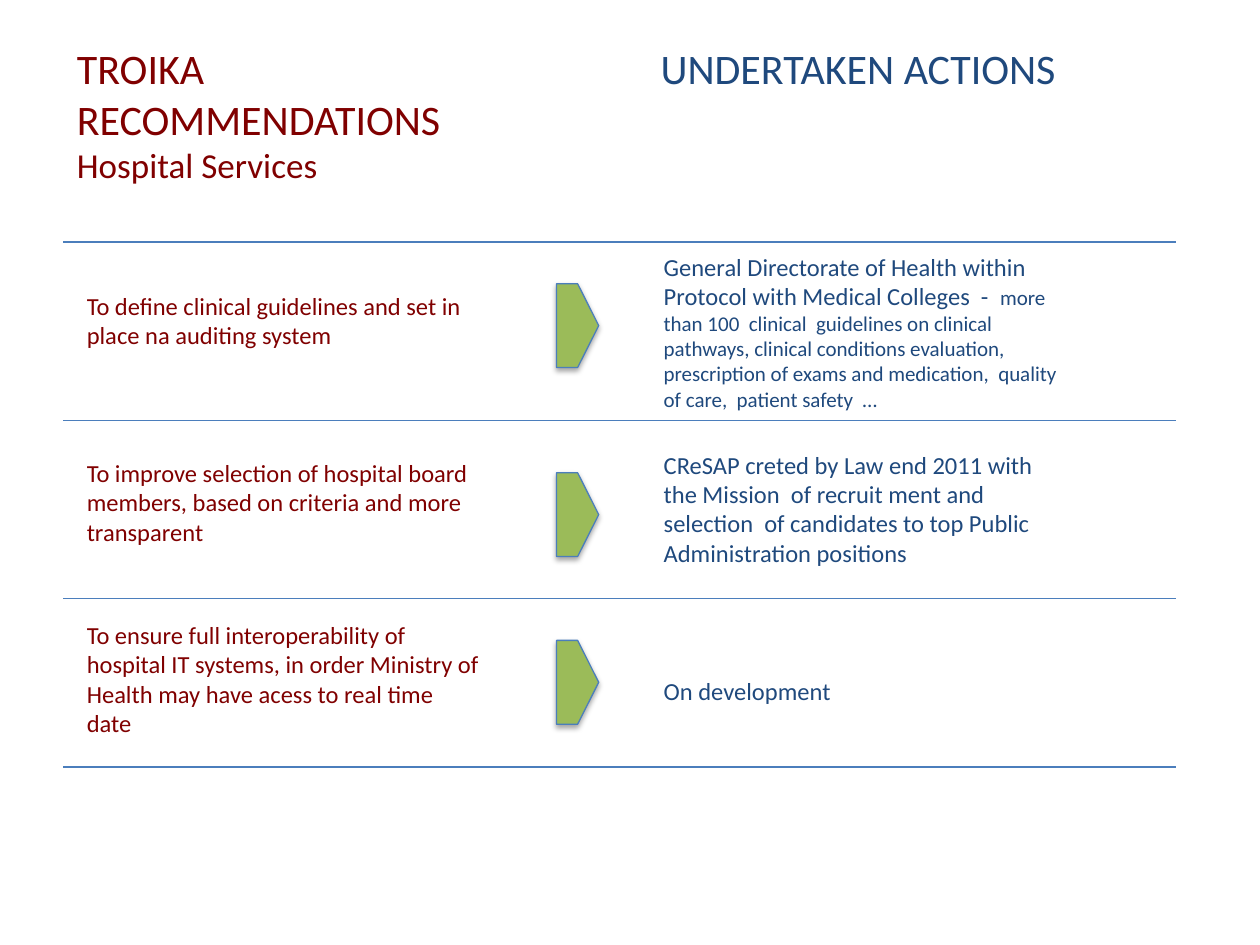
from lxml import etree
from pptx import Presentation
from pptx.dml.color import RGBColor
from pptx.enum.shapes import MSO_CONNECTOR, MSO_SHAPE
from pptx.enum.text import PP_ALIGN
from pptx.oxml import parse_xml
from pptx.oxml.ns import qn
from pptx.util import Cm, Pt

MAROON, NAVY, GREEN, BLUE = "800000", "1F497D", "9BBB59", "4B7EBC"
DRAWING_NS = "http://schemas.openxmlformats.org/drawingml/2006/main"

presentation = Presentation()
presentation.slide_width, presentation.slide_height = Cm(25.4), Cm(19.05)
slide = presentation.slides.add_slide(presentation.slide_layouts[6])


def add_frame(left, top, width, height):
    frame = slide.shapes.add_textbox(Cm(left), Cm(top), Cm(width), Cm(height)).text_frame
    frame.word_wrap = True
    return frame


def write(paragraph, text, size=14, color=NAVY, align=PP_ALIGN.LEFT):
    paragraph.alignment = align
    run = paragraph.add_run()
    run.text = text
    run.font.name = "Calibri"
    run.font.size = Pt(size)
    run.font.color.rgb = RGBColor.from_string(color)


# Column headings
recommendations = add_frame(1.3, 0.74, 10.24, 3.2)
write(recommendations.paragraphs[0], "TROIKA RECOMMENDATIONS", size=24, color=MAROON)
write(recommendations.add_paragraph(), "Hospital Services", size=20, color=MAROON)
actions = add_frame(12.2, 0.74, 10.2, 1.4)
write(actions.paragraphs[0], "UNDERTAKEN ACTIONS", size=24, align=PP_ALIGN.CENTER)

# Rules between the rows
for rule_top in (4.88, 8.47, 12.07, 15.46):
    rule = slide.shapes.add_connector(
        MSO_CONNECTOR.STRAIGHT, Cm(1.27), Cm(rule_top), Cm(23.7), Cm(rule_top))
    rule.line.color.rgb = RGBColor.from_string(BLUE)
    rule.line.width = Pt(0.75)
    etree.SubElement(rule._element.spPr, qn("a:effectLst"))

# Rows: recommendation and its top, arrow top, action parts (text, size) and their top
rows = [
    ("To define clinical guidelines and set in place na auditing system", 5.74, 5.72,
     [("General Directorate of Health within Protocol with Medical Colleges  -  ", 14),
      ("more  than 100  clinical  guidelines on clinical pathways, clinical conditions "
       "evaluation, prescription of exams and medication,  quality of care,  "
       "patient safety  …", 12)], 4.95),
    ("To improve selection of hospital board members, based on criteria and more "
     "transparent", 9.11, 9.53,
     [("CReSAP creted by Law end 2011 with the Mission  of recruit ment and  selection  "
       "of candidates to top Public Administration positions", 14)], 8.94),
    ("To ensure full interoperability of hospital IT systems, in order Ministry of Health "
     "may have acess to real time date", 12.37, 12.91,
     [("On development", 14)], 13.5),
]
for recommendation, recommendation_top, arrow_top, action_parts, action_top in rows:
    write(add_frame(1.5, recommendation_top, 8.46, 2.7).paragraphs[0],
          recommendation, color=MAROON)

    action = add_frame(13.13, action_top, 8.69, 1.9).paragraphs[0]
    for text, size in action_parts:
        write(action, text, size=size)

    # Arrow with a soft shadow below
    arrow = slide.shapes.add_shape(
        MSO_SHAPE.PENTAGON, Cm(11.22), Cm(arrow_top), Cm(0.85), Cm(1.69))
    arrow.fill.solid()
    arrow.fill.fore_color.rgb = RGBColor.from_string(GREEN)
    arrow.line.color.rgb = RGBColor.from_string(BLUE)
    arrow.line.width = Pt(0.75)
    arrow.shadow.inherit = False
    arrow._element.spPr.find(qn("a:effectLst")).append(parse_xml(
        f'<a:outerShdw xmlns:a="{DRAWING_NS}" blurRad="{Pt(3.1)}" dist="{Pt(1.8)}" '
        'dir="5400000" rotWithShape="0"><a:srgbClr val="000000">'
        '<a:alpha val="35000"/></a:srgbClr></a:outerShdw>'))

presentation.save("out.pptx")
